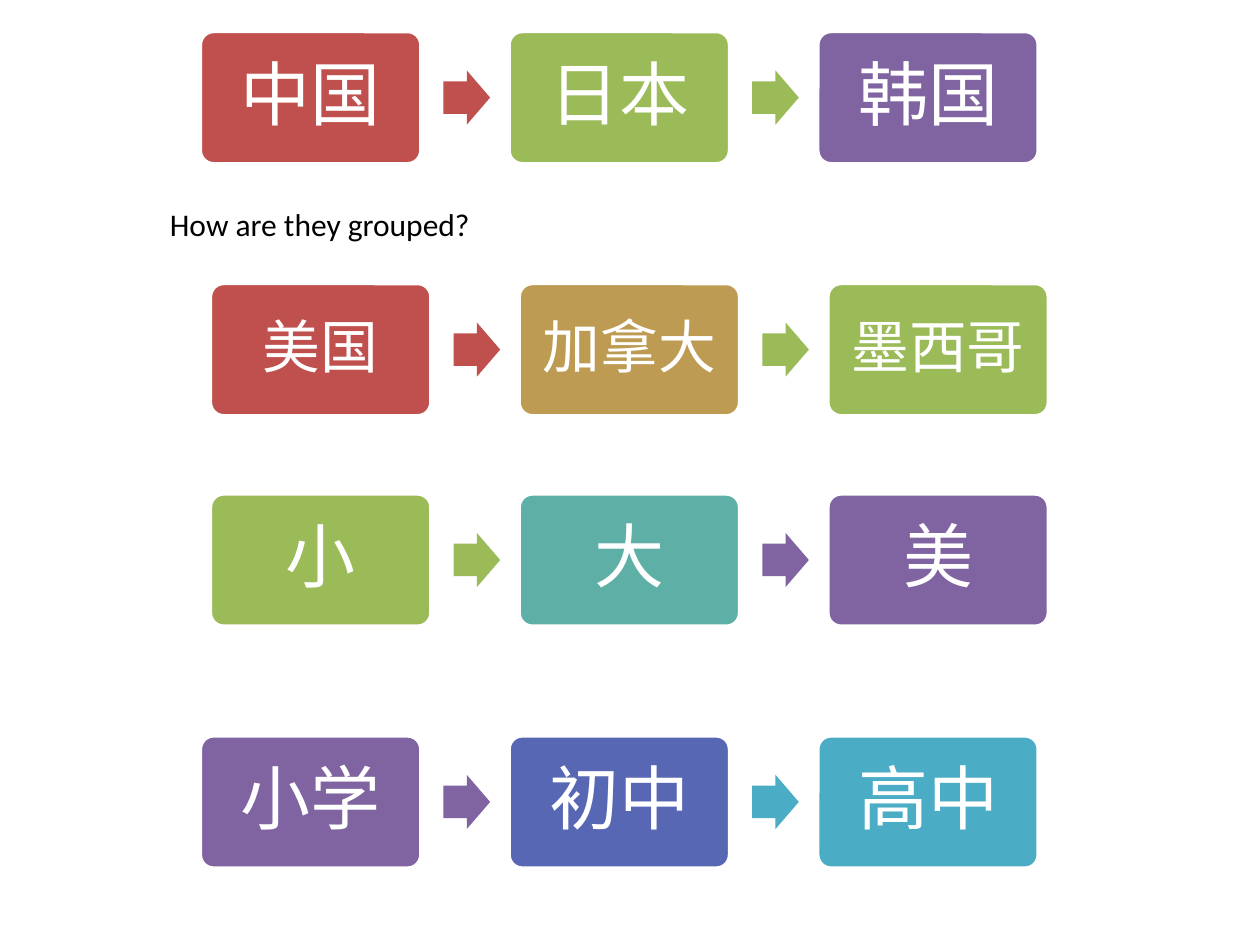
import pptx
import pptx.util
import pptx.dml.color
import pptx.enum.shapes
import pptx.enum.text

Inches = pptx.util.Inches
Pt = pptx.util.Pt
RGBColor = pptx.dml.color.RGBColor
Shape = pptx.enum.shapes.MSO_SHAPE
Align = pptx.enum.text.PP_ALIGN
Anchor = pptx.enum.text.MSO_ANCHOR

WHITE = RGBColor(0xFF, 0xFF, 0xFF)
BLACK = RGBColor(0x00, 0x00, 0x00)
RED = RGBColor(0xC0, 0x50, 0x4D)
GREEN = RGBColor(0x9B, 0xBB, 0x59)
PURPLE = RGBColor(0x80, 0x64, 0xA2)
GOLD = RGBColor(0xBD, 0x9B, 0x53)
TEAL = RGBColor(0x5E, 0xAF, 0xA6)
BLUE = RGBColor(0x57, 0x67, 0xB4)
AQUA = RGBColor(0x4B, 0xAC, 0xC6)

WIDE, HIGH = Inches(6.65), Inches(1.05)
CARD = Inches(1.75)
TIP_WIDE, TIP_HIGH = Inches(0.37), Inches(0.43)
TIP_GAP = Inches(0.18)

ROWS = [
    (1.59, 0.25, 40, 0.17, ["中国", "日本", "韩国"],
     [RED, GREEN, PURPLE], [RED, GREEN]),
    (1.67, 2.25, 33, 0.14, ["美国", "加拿大", "墨西哥"],
     [RED, GOLD, GREEN], [RED, GREEN]),
    (1.67, 3.92, 40, 0.17, ["小", "大", "美"],
     [GREEN, TEAL, PURPLE], [GREEN, PURPLE]),
    (1.59, 5.84, 40, 0.17, ["小学", "初中", "高中"],
     [PURPLE, BLUE, AQUA], [PURPLE, AQUA]),
]


def apply(item, form):
    for name, value in form.items():
        setattr(item, name, value)


def write(frame, text, size, color, form):
    part = frame.paragraphs[0]
    apply(part, form)
    run = part.add_run()
    run.text = text
    apply(run.font, {"name": "Calibri", "size": Pt(size)})
    run.font.color.rgb = color


def draw(shapes, kind, box, fill, ratios):
    shape = shapes.add_shape(kind, *box)
    shape.shadow.inherit = False
    shape.fill.solid()
    shape.fill.fore_color.rgb = fill
    for spot, ratio in enumerate(ratios):
        shape.adjustments[spot] = ratio
    return shape


def add_card(shapes, box, text, size, inset, fill):
    card = draw(shapes, Shape.ROUNDED_RECTANGLE, box, fill, [0.1])
    card.line.color.rgb = WHITE
    card.line.width = Pt(2)
    sides = ("margin_left", "margin_top", "margin_right", "margin_bottom")
    form = dict.fromkeys(sides, Inches(inset))
    apply(card.text_frame, {**form, "word_wrap": True,
                            "vertical_anchor": Anchor.MIDDLE})
    write(card.text_frame, text, size, WHITE,
          {"alignment": Align.CENTER, "line_spacing": 0.9})


def add_row(slide, box, size, inset, words, fills, tips):
    left, top, wide, high = box
    shapes = slide.shapes.add_group_shape().shapes
    step = (wide - CARD) // (len(words) - 1)
    for spot, (word, fill) in enumerate(zip(words, fills)):
        start = left + spot * step
        add_card(shapes, (start, top, CARD, high), word, size, inset, fill)
        if spot < len(tips):
            place = (start + CARD + TIP_GAP, top + (high - TIP_HIGH) // 2,
                     TIP_WIDE, TIP_HIGH)
            tip = draw(shapes, Shape.RIGHT_ARROW, place, tips[spot], [0.6, 0.5])
            tip.line.fill.background()


def add_ask(slide, box):
    frame = slide.shapes.add_textbox(*box).text_frame
    apply(frame, {"word_wrap": True,
                  "auto_size": pptx.enum.text.MSO_AUTO_SIZE.SHAPE_TO_FIT_TEXT})
    write(frame, "How are they grouped?", 18, BLACK, {"alignment": Align.LEFT})


def main():
    deck = pptx.Presentation()
    apply(deck, {"slide_width": Inches(10), "slide_height": Inches(7.5)})
    slide = deck.slides.add_slide(deck.slide_layouts[6])
    for left, top, *rest in ROWS:
        add_row(slide, (Inches(left), Inches(top), WIDE, HIGH), *rest)
    add_ask(slide, (Inches(1.25), Inches(1.58), Inches(7.92), Inches(0.42)))
    deck.save("out.pptx")


if __name__ == "__main__":
    main()
